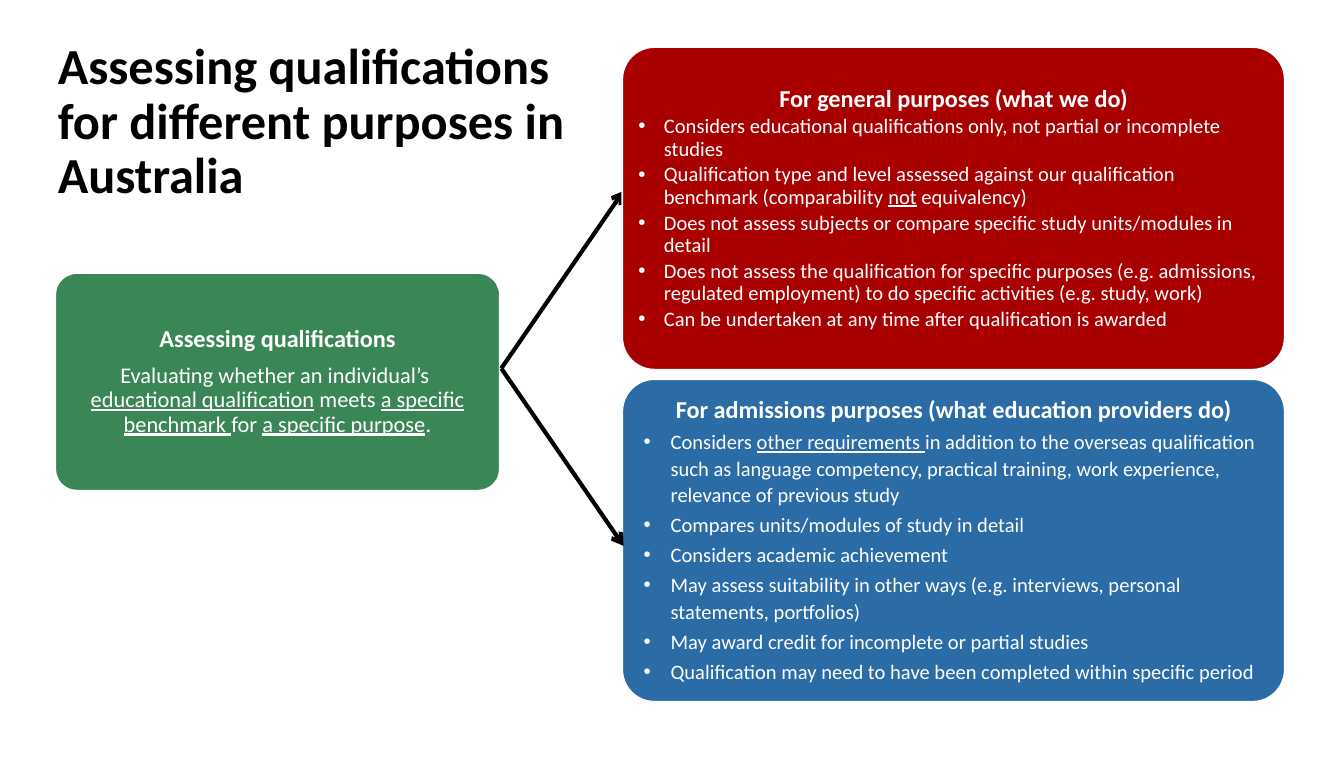
from lxml import etree
from pptx import Presentation
from pptx.dml.color import RGBColor
from pptx.enum.shapes import MSO_CONNECTOR, MSO_SHAPE
from pptx.enum.text import MSO_ANCHOR, MSO_AUTO_SIZE, PP_ALIGN
from pptx.oxml.ns import qn
from pptx.util import Inches, Pt

ROUNDED = MSO_SHAPE.ROUNDED_RECTANGLE
STRAIGHT = MSO_CONNECTOR.STRAIGHT
LEFT, CENTER = PP_ALIGN.LEFT, PP_ALIGN.CENTER
MIDDLE = MSO_ANCHOR.MIDDLE
FONT = "Calibri"
WHITE, BLACK = "FFFFFF", "000000"

TITLE = "Assessing qualifications for different purposes in Australia"
TITLE_AREA = (0.43, 0.32, 4.18, 1.19)

# Underscores mark underlined words; a newline is a line break.
DEFINITION = {
    "area": (0.41, 2.03, 3.31, 1.62), "fill": "3A8657", "inset": 0.03,
    "heading": "Assessing qualifications", "heading_after": 6,
    "lines": ["Evaluating whether an individual’s \n_educational qualification_ meets "
              "_a specific benchmark _for _a specific purpose_."],
    "size": 12, "spacing": 0.9, "indent": 0,
}
GENERAL = {
    "area": (4.63, 0.35, 4.93, 2.4), "fill": "A80000", "inset": 0.05,
    "heading": "For general purposes (what we do)", "heading_after": 2,
    "lines": [
        "Considers educational qualifications only, not partial or incomplete studies",
        "Qualification type and level assessed against our qualification benchmark "
        "(comparability _not_ equivalency)",
        "Does not assess subjects or compare specific study units/modules in detail",
        "Does not assess the qualification for specific purposes (e.g. admissions, "
        "regulated employment) to do specific activities (e.g. study, work)",
        "Can be undertaken at any time after qualification is awarded",
    ],
    "size": 11, "spacing": 0.9, "indent": 0.19,
}
ADMISSIONS = {
    "area": (4.63, 2.82, 4.93, 2.4), "fill": "2B6CA7", "inset": 0.09,
    "heading": "For admissions purposes (what education providers do)", "heading_after": 2,
    "lines": [
        "Considers _other requirements _in addition to the overseas qualification such as "
        "language competency, practical training, work experience, relevance of previous study",
        "Compares units/modules of study in detail",
        "Considers academic achievement",
        "May assess suitability in other ways (e.g. interviews, personal statements, portfolios)",
        "May award credit for incomplete or partial studies",
        "Qualification may need to have been completed within specific period",
    ],
    "size": 11, "spacing": 1.07, "indent": 0.2,
}
ARROW_START = (3.73, 2.74)
GENERAL_TIP, ADMISSIONS_TIP = (4.64, 1.42), (4.64, 4.06)


def rgb(value):
    return RGBColor.from_string(value)


def set_frame(frame, inset):
    values = {f"margin_{side}": Inches(inset) for side in ("left", "top", "right", "bottom")}
    values |= {"word_wrap": True, "auto_size": MSO_AUTO_SIZE.NONE, "vertical_anchor": MIDDLE}
    for name, value in values.items():
        setattr(frame, name, value)


def write(para, text, size, color, bold=False, **layout):
    """Fill a paragraph, underlining the text between underscores."""
    for name, value in layout.items():
        setattr(para, name, value)
    for part, words in enumerate(text.split("_")):
        for row, piece in enumerate(words.split("\n")):
            if row:
                para.add_line_break()
            if not piece:
                continue
            span = para.add_run()
            span.text = piece
            font = {"name": FONT, "size": Pt(size), "bold": bold, "underline": part % 2 == 1}
            for name, value in font.items():
                setattr(span.font, name, value)
            span.font.color.rgb = rgb(color)


def add_bullet(para, indent):
    properties = para._p.get_or_add_pPr()
    properties.set("marL", str(Inches(indent)))
    properties.set("indent", str(-Inches(indent)))
    etree.SubElement(properties, qn("a:buFont"), typeface="Arial")
    etree.SubElement(properties, qn("a:buChar"), char="•")


def add_panel(page, panel):
    box = page.shapes.add_shape(ROUNDED, *map(Inches, panel["area"]))
    box.adjustments[0] = 0.1
    box.shadow.inherit = False
    box.fill.solid()
    box.fill.fore_color.rgb = rgb(panel["fill"])
    box.line.color.rgb = rgb(WHITE)
    box.line.width = Pt(1)
    frame = box.text_frame
    set_frame(frame, panel["inset"])
    write(frame.paragraphs[0], panel["heading"], 13, WHITE, True, alignment=CENTER,
          line_spacing=0.9, space_after=Pt(panel["heading_after"]))
    for line in panel["lines"]:
        para = frame.add_paragraph()
        if panel["indent"]:
            add_bullet(para, panel["indent"])
        write(para, line, panel["size"], WHITE, alignment=LEFT if panel["indent"] else CENTER,
              line_spacing=panel["spacing"], space_after=Pt(2))


def add_arrow(page, start, tip):
    arrow = page.shapes.add_connector(STRAIGHT, *map(Inches, start + tip))
    arrow.line.color.rgb = rgb(BLACK)
    arrow.line.width = Pt(2.25)
    etree.SubElement(arrow.line._get_or_add_ln(), qn("a:tailEnd"), type="arrow")
    etree.SubElement(arrow._element.spPr, qn("a:effectLst"))


def main():
    deck = Presentation()
    deck.slide_width, deck.slide_height = Inches(10), Inches(5.63)
    page = deck.slides.add_slide(deck.slide_layouts[5])

    title = page.shapes.title
    title.left, title.top, title.width, title.height = map(Inches, TITLE_AREA)
    set_frame(title.text_frame, 0)
    write(title.text_frame.paragraphs[0], TITLE, 27, BLACK, True,
          alignment=LEFT, line_spacing=0.9)

    add_panel(page, DEFINITION)
    add_arrow(page, ARROW_START, GENERAL_TIP)
    add_panel(page, GENERAL)
    add_panel(page, ADMISSIONS)
    add_arrow(page, ARROW_START, ADMISSIONS_TIP)
    deck.save("out.pptx")


if __name__ == "__main__":
    main()
